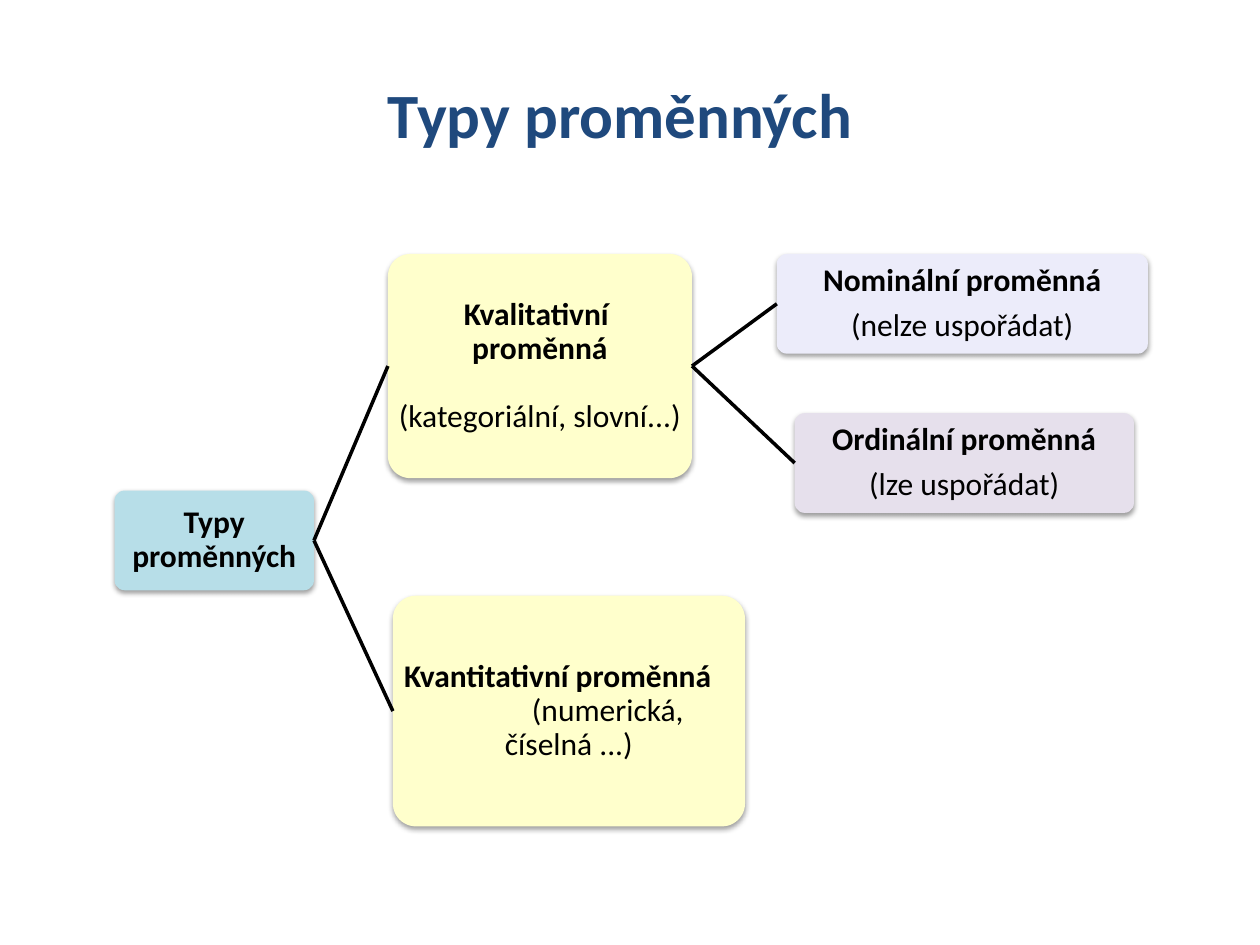
"""Build a slide with a tree of variable types."""

from dataclasses import dataclass

from lxml.etree import SubElement
from pptx import Presentation
from pptx.dml.color import RGBColor
from pptx.enum.shapes import MSO_CONNECTOR, MSO_SHAPE
from pptx.enum.text import MSO_ANCHOR, PP_ALIGN
from pptx.oxml.ns import qn
from pptx.util import Cm, Pt

LEFT_SIDE, RIGHT_SIDE = 1, 3


@dataclass(frozen=True)
class Theme:
    """Colours, font and sizes of the slide."""

    font: str = "Calibri"
    title_size: int = 36
    body_size: int = 18
    line_width: int = 2
    title: str = "1F497D"
    ink: str = "000000"
    root: str = "B7DEE8"
    branch: str = "FFFFCC"
    nominal: str = "ECECFA"
    ordinal: str = "E6E0EC"


@dataclass(frozen=True)
class Line:
    """One paragraph of a box."""

    text: str
    bold: bool = False
    space_before: float = 0
    align: PP_ALIGN = PP_ALIGN.CENTER
    margin: float = 0
    indent: float = 0


THEME = Theme()


def format_runs(paragraph, size, color, bold):
    """Apply the theme font to every run of a paragraph."""
    for run in paragraph.runs:
        run.font.name = THEME.font
        run.font.size = Pt(size)
        run.font.bold = bold
        run.font.color.rgb = RGBColor.from_string(color)


def set_title(slide, text):
    """Fill and place the title placeholder."""
    title = slide.shapes.title
    title.left, title.top = Cm(2.77), Cm(1.4)
    title.width, title.height = Cm(19.46), Cm(1.8)
    title.text_frame.text = text
    title.text_frame.vertical_anchor = MSO_ANCHOR.TOP
    paragraph = title.text_frame.paragraphs[0]
    paragraph.alignment = PP_ALIGN.CENTER
    format_runs(paragraph, THEME.title_size, THEME.title, True)


def add_soft_shadow(shape):
    """Give a shape a soft shadow below it."""
    shape.shadow.inherit = False
    effects = shape._element.spPr.find(qn("a:effectLst"))
    shadow = SubElement(effects, qn("a:outerShdw"), blurRad=str(Pt(3.1)),
                        dist=str(Pt(1.6)), dir="5400000", rotWithShape="0")
    color = SubElement(shadow, qn("a:srgbClr"), val=THEME.ink)
    SubElement(color, qn("a:alpha"), val="38000")


def write_line(paragraph, line):
    """Write and format one paragraph of a box."""
    paragraph.text = line.text
    paragraph.alignment = line.align
    paragraph.line_spacing = 0.9
    paragraph.space_before = Pt(line.space_before)
    properties = paragraph._p.get_or_add_pPr()
    properties.set("marL", str(Cm(line.margin)))
    properties.set("indent", str(Cm(line.indent)))
    format_runs(paragraph, THEME.body_size, THEME.ink, line.bold)


def add_box(slide, left, top, width, height, fill, lines):
    """Add a rounded box with centred text."""
    box = slide.shapes.add_shape(MSO_SHAPE.ROUNDED_RECTANGLE,
                                 Cm(left), Cm(top), Cm(width), Cm(height))
    box.adjustments[0] = 0.1
    box.fill.solid()
    box.fill.fore_color.rgb = RGBColor.from_string(fill)
    box.line.fill.background()
    add_soft_shadow(box)
    frame = box.text_frame
    frame.word_wrap = True
    frame.vertical_anchor = MSO_ANCHOR.MIDDLE
    frame.margin_left = frame.margin_right = Cm(0.03)
    frame.margin_top = frame.margin_bottom = Cm(0.03)
    for index, line in enumerate(lines):
        paragraph = frame.add_paragraph() if index else frame.paragraphs[0]
        write_line(paragraph, line)
    return box


def join_boxes(slide, parent, child):
    """Draw a line from the parent's right side to the child's left side."""
    connector = slide.shapes.add_connector(MSO_CONNECTOR.STRAIGHT, 0, 0, 0, 0)
    connector.begin_connect(parent, RIGHT_SIDE)
    connector.end_connect(child, LEFT_SIDE)
    connector.line.color.rgb = RGBColor.from_string(THEME.ink)
    connector.line.width = Pt(THEME.line_width)
    SubElement(connector._element.spPr, qn("a:effectLst"))


def main():
    """Build and save the presentation."""
    presentation = Presentation()
    presentation.slide_width, presentation.slide_height = Cm(25.4), Cm(19.05)
    slide = presentation.slides.add_slide(presentation.slide_layouts[5])
    set_title(slide, "Typy proměnných")

    root = add_box(slide, 2.31, 9.89, 4.02, 2.01, THEME.root,
                   [Line("Typy proměnných", bold=True)])
    qualitative = add_box(slide, 7.82, 5.12, 6.13, 4.52, THEME.branch, [
        Line("Kvalitativní  proměnná", bold=True),
        Line("(kategoriální, slovní...)", space_before=19.4)])
    quantitative = add_box(slide, 7.92, 12.01, 7.1, 4.65, THEME.branch, [
        Line("Kvantitativní proměnná", bold=True, align=PP_ALIGN.LEFT, margin=0.06),
        Line("(numerická, číselná ...)", indent=1.57)])
    nominal = add_box(slide, 15.66, 5.12, 7.48, 2.01, THEME.nominal, [
        Line("Nominální proměnná", bold=True),
        Line("(nelze uspořádat)", space_before=6.3)])
    ordinal = add_box(slide, 16.02, 8.33, 6.84, 2.01, THEME.ordinal, [
        Line("Ordinální proměnná", bold=True),
        Line("(lze uspořádat)", space_before=6.3)])

    for parent, child in ((root, qualitative), (root, quantitative),
                          (qualitative, nominal), (qualitative, ordinal)):
        join_boxes(slide, parent, child)
    presentation.save("out.pptx")


if __name__ == "__main__":
    main()
